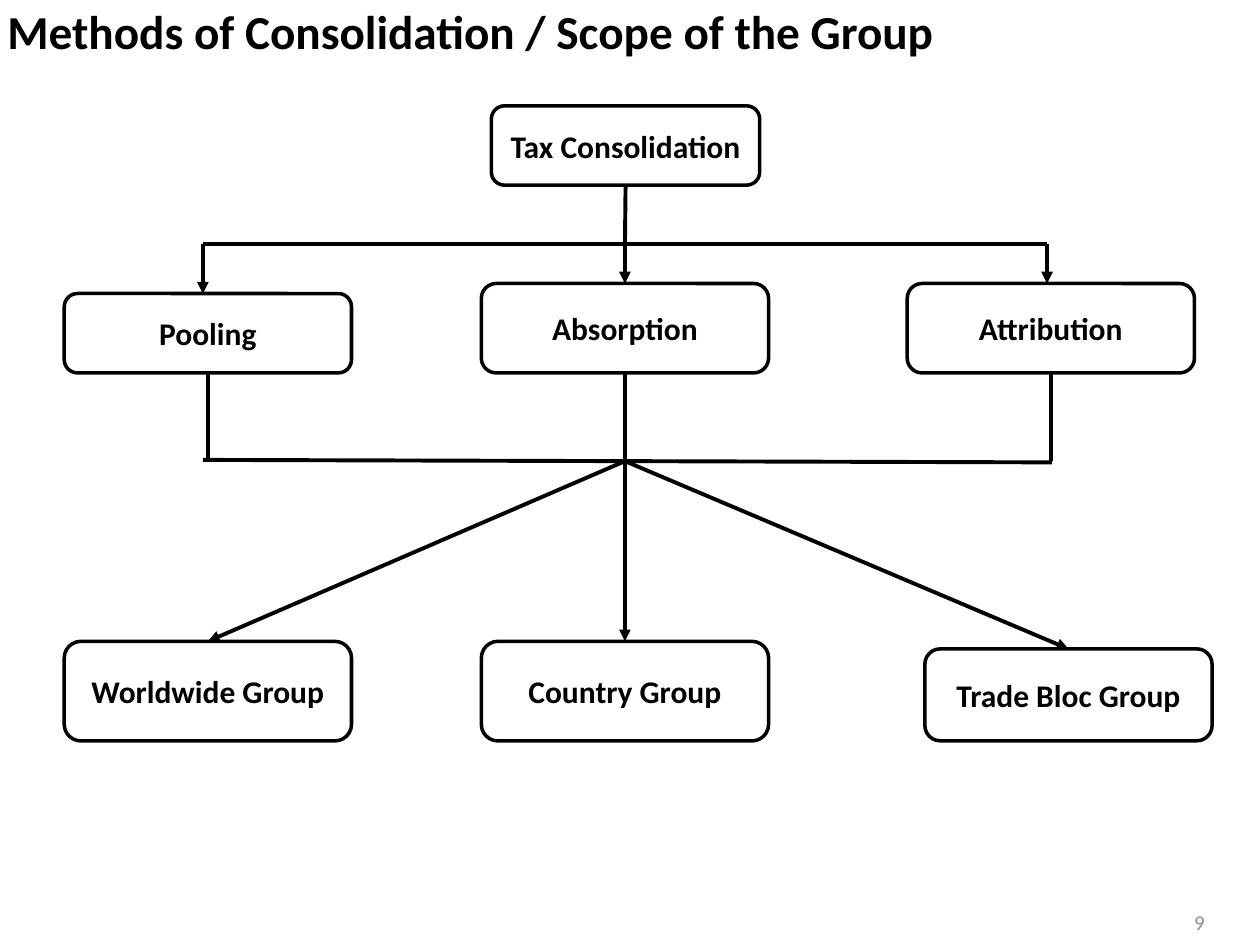
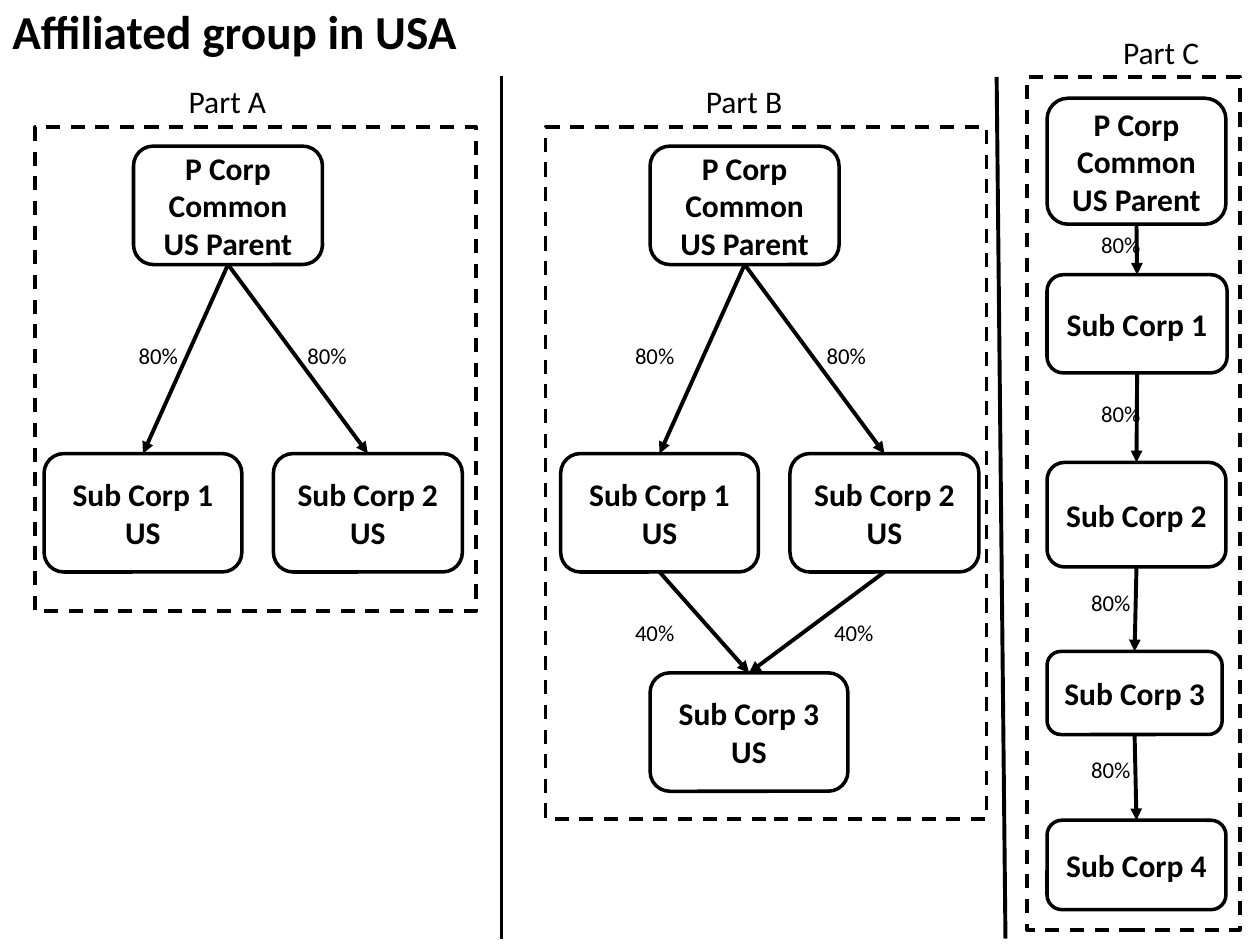
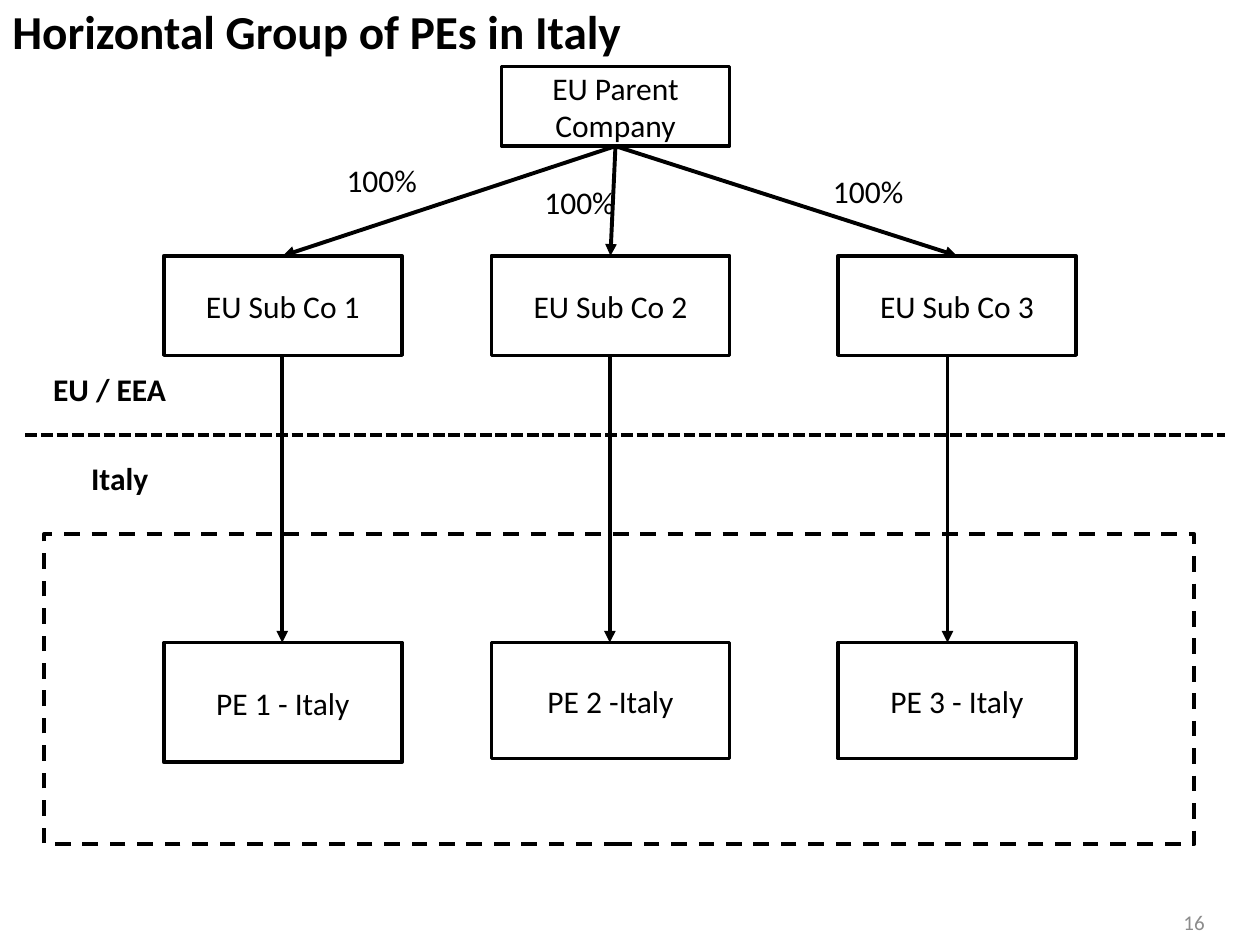
from dataclasses import dataclass

import lxml.etree
import pptx
import pptx.dml.color
import pptx.enum.dml
import pptx.enum.shapes
import pptx.enum.text
import pptx.oxml.ns
import pptx.util

Inches = pptx.util.Inches
Align = pptx.enum.text.PP_ALIGN
Anchor = pptx.enum.text.MSO_ANCHOR
Dash = pptx.enum.dml.MSO_LINE
Shape = pptx.enum.shapes.MSO_SHAPE
Point = tuple[float, float]

COLORS = {"ink": "000000", "paper": "FFFFFF", "muted": "8C8C8C"}
FONT = "Calibri"
BOX_LINE = 2
CONNECTOR_LINE = 2.25


@dataclass(frozen=True)
class Box:
    text: str
    left: float
    top: float
    width: float
    height: float
    bold: bool = True
    outline: Shape = Shape.ROUNDED_RECTANGLE

    @property
    def top_center(self) -> Point:
        return self.left + self.width / 2, self.top

    @property
    def bottom_center(self) -> Point:
        return self.left + self.width / 2, self.top + self.height


@dataclass(frozen=True)
class Label:
    text: str
    left: float
    top: float
    width: float = 1.65
    size: float = 13
    bold: bool = False


# Shared helpers

def rgb(name: str):
    return pptx.dml.color.RGBColor.from_string(COLORS[name])


def write_text(text_frame, text: str, *, size: float = 18, bold: bool = False,
               color: str = "ink", align=Align.CENTER, anchor=Anchor.MIDDLE) -> None:
    text_frame.text = text
    text_frame.word_wrap = True
    text_frame.vertical_anchor = anchor
    for paragraph in text_frame.paragraphs:
        paragraph.alignment = align
        font = paragraph.runs[0].font
        font.name, font.size, font.bold = FONT, pptx.util.Pt(size), bold
        font.color.rgb = rgb(color)


def add_text(slide, text: str, left: float, top: float, width: float,
             height: float, **text_format) -> None:
    shape = slide.shapes.add_textbox(*map(Inches, (left, top, width, height)))
    write_text(shape.text_frame, text, **text_format)


def style_line(line, width: float, dash=None) -> None:
    line.color.rgb = rgb("ink")
    line.width = pptx.util.Pt(width)
    if dash is not None:
        line.dash_style = dash


def draw_rectangle(slide, outline: Shape, left: float, top: float, width: float,
                   height: float, line_width: float = BOX_LINE, dash=None):
    shape = slide.shapes.add_shape(outline, *map(Inches, (left, top, width, height)))
    shape.shadow.inherit = False
    shape.fill.solid()
    shape.fill.fore_color.rgb = rgb("paper")
    style_line(shape.line, line_width, dash)
    return shape


def draw_frame(slide, left: float, top: float, width: float, height: float,
               line_width: float = BOX_LINE) -> None:
    draw_rectangle(slide, Shape.RECTANGLE, left, top, width, height, line_width, Dash.DASH)


def draw_boxes(slide, *boxes: Box) -> None:
    for box in boxes:
        shape = draw_rectangle(slide, box.outline, box.left, box.top, box.width, box.height)
        write_text(shape.text_frame, box.text, bold=box.bold)


def draw_labels(slide, *labels: Label) -> None:
    for label in labels:
        height = 0.4 if label.size == 18 else 0.32
        add_text(slide, label.text, label.left, label.top, label.width, height,
                 size=label.size, bold=label.bold, anchor=Anchor.TOP)


def draw_line(slide, start: Point, end: Point, arrow: bool = False, dash=None) -> None:
    connector = slide.shapes.add_connector(
        pptx.enum.shapes.MSO_CONNECTOR.STRAIGHT, *map(Inches, (*start, *end)))
    style_line(connector.line, CONNECTOR_LINE, dash)
    qualified = pptx.oxml.ns.qn
    if arrow:
        lxml.etree.SubElement(connector.line._get_or_add_ln(), qualified("a:tailEnd"),
                              type="triangle")
    lxml.etree.SubElement(connector._element.spPr, qualified("a:effectLst"))


def link(slide, parent: Box, child: Box) -> None:
    draw_line(slide, parent.bottom_center, child.top_center, arrow=True)


def new_slide(presentation, title: str, title_left: float = 0, page_number: str = ""):
    slide = presentation.slides.add_slide(presentation.slide_layouts[6])
    add_text(slide, title, title_left, -0.03, 10, 0.56, size=27, bold=True,
             align=Align.LEFT, anchor=Anchor.TOP)
    if page_number:
        add_text(slide, page_number, 7.33, 7.12, 2.33, 0.4, size=12, color="muted",
                 align=Align.RIGHT)
    return slide


# Slides

def build_methods(presentation) -> None:
    slide = new_slide(presentation, "Methods of Consolidation / Scope of the Group", -0.04, "9")
    root = Box("Tax Consolidation", 3.9, 0.84, 2.13, 0.63)
    methods = (Box("Pooling", 0.51, 2.33, 2.28, 0.63),
               Box("Absorption", 3.82, 2.25, 2.28, 0.71),
               Box("Attribution", 7.2, 2.25, 2.28, 0.71))
    groups = (Box("Worldwide Group", 0.51, 5.09, 2.28, 0.79),
              Box("Country Group", 3.82, 5.09, 2.28, 0.79),
              Box("Trade Bloc Group", 7.34, 5.15, 2.28, 0.73))
    draw_boxes(slide, root, *methods, *groups)

    # Branches from the root to the methods
    upper_bus, lower_bus = 1.94, 3.66
    columns = (1.61, 4.96, 8.31)
    draw_line(slide, root.bottom_center, (columns[1], upper_bus))
    draw_line(slide, (columns[0], upper_bus), (columns[2], upper_bus))
    for column, method in zip(columns, methods):
        draw_line(slide, (column, upper_bus), (column, method.top), arrow=True)

    # Methods joined again, then spread over the groups
    draw_line(slide, (columns[0], 3.65), (8.35, 3.67))
    for method, group in zip(methods, groups):
        draw_line(slide, method.bottom_center, (method.bottom_center[0], lower_bus))
        draw_line(slide, (columns[1], lower_bus), group.top_center, arrow=True)


def draw_pair_group(slide, offset: float, part: str, frame_height: float) -> tuple[Box, Box]:
    """Draw a parent with two subsidiaries and return the subsidiaries."""
    parent = Box("P Corp\nCommon US Parent", offset + 1.06, 1.16, 1.5, 0.94)
    subsidiaries = (Box("Sub Corp 1\nUS", offset + 0.35, 3.6, 1.57, 0.94),
                    Box("Sub Corp 2\nUS", offset + 2.17, 3.6, 1.5, 0.94))
    draw_frame(slide, offset + (0.28 if offset == 0 else 0.23), 1.01, 3.5, frame_height)
    draw_boxes(slide, parent, *subsidiaries)
    for subsidiary in subsidiaries:
        link(slide, parent, subsidiary)
    draw_labels(slide, Label(part, offset + 0.98, 0.6, size=18))
    return subsidiaries


def build_affiliated(presentation) -> None:
    slide = new_slide(presentation, "Affiliated group in USA")

    # Parts A and B
    draw_pair_group(slide, 0, "Part A", 3.84)
    subsidiaries = draw_pair_group(slide, 4.1, "Part B", 5.49)
    shared = Box("Sub Corp 3\nUS", 5.16, 5.34, 1.57, 0.94)
    draw_boxes(slide, shared)
    for subsidiary in subsidiaries:
        link(slide, subsidiary, shared)
    draw_labels(slide, *(Label("80%", left, 2.66) for left in (0.43, 1.77, 4.37, 5.89)),
                *(Label("40%", left, 4.86) for left in (4.37, 5.95)))

    # Part C
    draw_frame(slide, 8.15, 0.61, 1.69, 6.77)
    chain = (Box("P Corp\nCommon US Parent", 8.31, 0.78, 1.42, 1),
             Box("Sub Corp 1", 8.31, 2.18, 1.43, 0.78),
             Box("Sub Corp 2", 8.31, 3.67, 1.42, 0.83),
             Box("Sub Corp 3", 8.31, 5.17, 1.39, 0.66),
             Box("Sub Corp 4", 8.31, 6.51, 1.42, 0.71))
    draw_boxes(slide, *chain)
    for parent, child in zip(chain, chain[1:]):
        link(slide, parent, child)
    share_places = ((8.07, 1.78), (8.07, 3.12), (7.99, 4.62), (7.99, 5.95))
    draw_labels(slide, Label("Part C", 8.39, 0.21, size=18),
                *(Label("80%", left, top) for left, top in share_places))

    # Dividers between the parts
    draw_line(slide, (3.98, 0.6), (3.98, 7.45))
    draw_line(slide, (7.91, 0.61), (7.98, 7.45))


def build_horizontal(presentation) -> None:
    slide = new_slide(presentation, "Horizontal Group of PEs in Italy", page_number="16")

    # Border and Italian group
    draw_frame(slide, 0.35, 4.24, 9.13, 2.46, CONNECTOR_LINE)
    draw_line(slide, (0.2, 3.45), (9.72, 3.45), dash=Dash.SQUARE_DOT)
    draw_labels(slide, Label("EU / EEA", 0.12, 2.89, 1.5, 18, True),
                Label("Italy", 0.2, 3.59, 1.5, 18, True))

    # Parent, subsidiaries and their permanent establishments
    plain = {"bold": False, "outline": Shape.RECTANGLE}
    parent = Box("EU Parent Company", 3.98, 0.53, 1.81, 0.63, **plain)
    draw_boxes(slide, parent)
    columns = ((1.3, "PE 1 - Italy", 0.95, 2.24),
               (3.9, "PE 2 -Italy", 0.92, 4.84),
               (6.65, "PE 3 - Italy", 0.92, 7.52))
    for number, (left, establishment, height, arrow_x) in enumerate(columns, start=1):
        subsidiary = Box(f"EU Sub Co {number}", left, 2.03, 1.89, 0.79, **plain)
        draw_boxes(slide, subsidiary, Box(establishment, left, 5.1, 1.89, height, **plain))
        link(slide, parent, subsidiary)
        draw_line(slide, (arrow_x, 2.82), (arrow_x, 5.1), arrow=True)
    draw_labels(slide, *(Label("100%", left, top, 0.94, 18)
                         for left, top in ((2.56, 1.23), (4.13, 1.4), (6.42, 1.32))))


def main() -> None:
    presentation = pptx.Presentation()
    presentation.slide_width, presentation.slide_height = Inches(10), Inches(7.5)
    build_methods(presentation)
    build_affiliated(presentation)
    build_horizontal(presentation)
    presentation.save("out.pptx")


if __name__ == "__main__":
    main()
